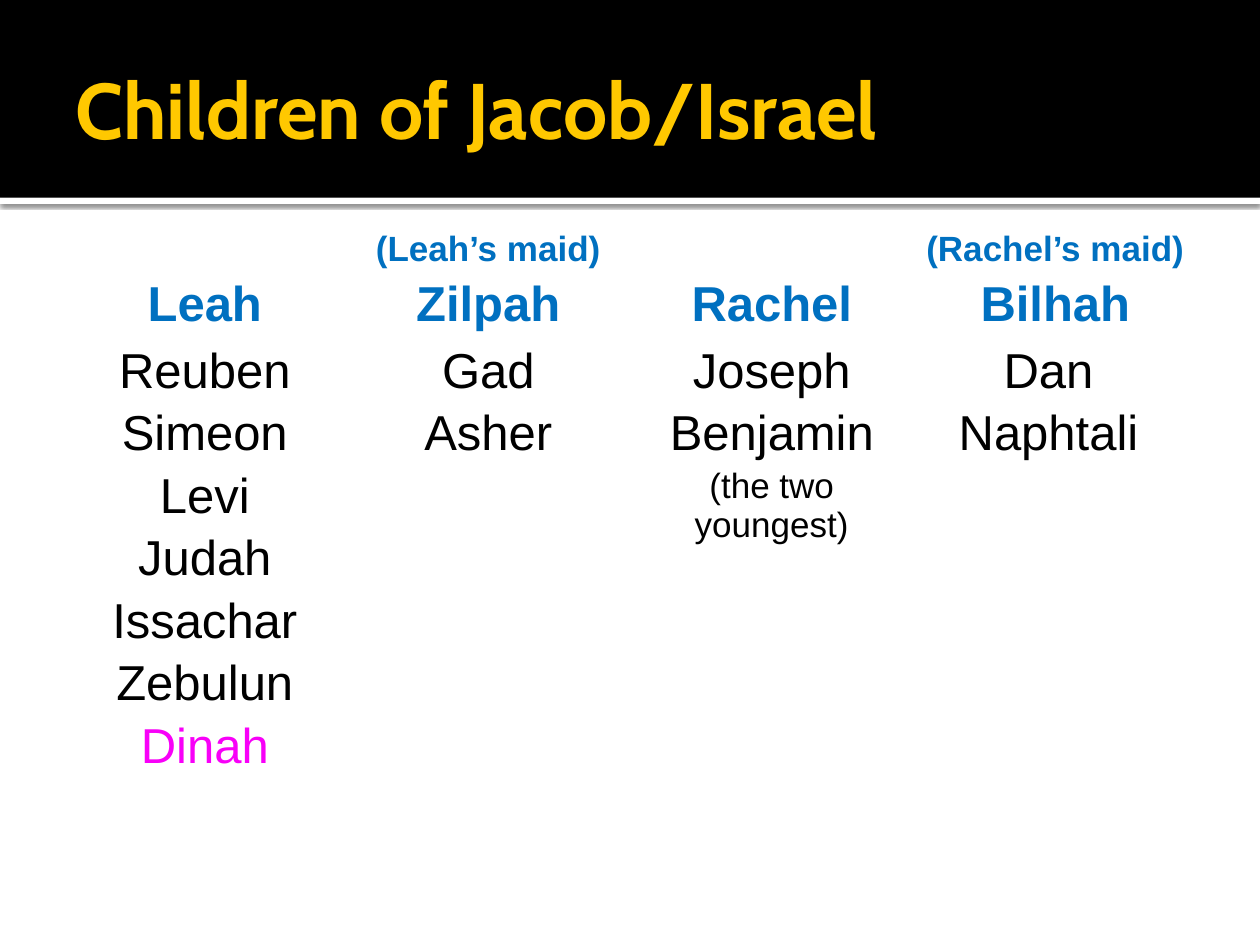
"""Build the slide listing the children of Jacob under each mother."""
from dataclasses import dataclass

from lxml import etree
from pptx import Presentation
from pptx.dml.color import RGBColor
from pptx.enum import shapes, text
from pptx.oxml import ns
from pptx.util import Pt


@dataclass(frozen=True)
class Theme:
    black: str = "000000"
    white: str = "FFFFFF"
    gold: str = "FFC800"
    blue: str = "0070C0"
    magenta: str = "F800F8"
    title_font: str = "Cabin"
    body_font: str = "Arial"
    title_size: float = 45
    name_size: float = 28
    note_size: float = 20


THEME = Theme()


@dataclass(frozen=True)
class Line:
    words: str
    size: float = THEME.name_size
    color: str = THEME.black
    bold: bool = False


@dataclass(frozen=True)
class Family:
    mother: str
    children: tuple[Line, ...]
    role: str = ""

    def heading(self) -> list[Line]:
        lines = [Line(self.mother, THEME.name_size, THEME.blue, True)]
        if self.role:
            lines.insert(0, Line(self.role, THEME.note_size, THEME.blue, True))
        return lines


@dataclass(frozen=True)
class Band:
    top: float
    height: float
    color: str
    shadow: bool = False


PAGE_WIDTH, PAGE_HEIGHT = 720, 540
MARGIN = 36
TABLE_TOP = 126
ROW_HEIGHTS = (67, 287)
SPACE_BEFORE = 0.16

BANDS = (
    Band(113, 3.6, THEME.white, shadow=True),
    Band(0, 113, THEME.black),
)

FAMILIES = (
    Family("Leah", (
        *map(Line, ("Reuben", "Simeon", "Levi", "Judah", "Issachar", "Zebulun")),
        Line("Dinah", color=THEME.magenta),
    )),
    Family("Zilpah", (Line("Gad"), Line("Asher")), "(Leah’s maid)"),
    Family("Rachel", (
        Line("Joseph"),
        Line("Benjamin"),
        Line("(the two youngest)", THEME.note_size),
    )),
    Family("Bilhah", (Line("Dan "), Line("Naphtali ")), "(Rachel’s maid)"),
)


def add_span(para, line: Line, font: str) -> None:
    span = para.add_run()
    span.text = line.words
    span.font.name = font
    span.font.size = Pt(line.size)
    span.font.bold = line.bold
    span.font.color.rgb = RGBColor.from_string(line.color)


def add_shadow(box) -> None:
    effects = box.element.spPr.find(ns.qn("a:effectLst"))
    shadow = etree.SubElement(
        effects, ns.qn("a:outerShdw"), blurRad=str(Pt(2.5)), dist=str(Pt(0.8)),
        dir="5400000", algn="tl", rotWithShape="0")
    color = etree.SubElement(shadow, ns.qn("a:srgbClr"), val=THEME.black)
    etree.SubElement(color, ns.qn("a:alpha"), val="60000")


def draw_band(page, band: Band) -> None:
    box = page.shapes.add_shape(
        shapes.MSO_SHAPE.RECTANGLE, 0, Pt(band.top), Pt(PAGE_WIDTH), Pt(band.height))
    box.fill.solid()
    box.fill.fore_color.rgb = RGBColor.from_string(band.color)
    box.line.fill.background()
    box.shadow.inherit = False
    if band.shadow:
        add_shadow(box)


def draw_title(page, words: str) -> None:
    title = page.shapes.title
    title.left, title.top = Pt(MARGIN), Pt(12.24)
    title.width, title.height = Pt(PAGE_WIDTH - 2 * MARGIN), Pt(98.64)
    frame = title.text_frame
    frame.word_wrap = True
    frame.auto_size = text.MSO_AUTO_SIZE.NONE
    frame.vertical_anchor = text.MSO_ANCHOR.MIDDLE
    frame.margin_left = Pt(7.2)
    frame.margin_right = frame.margin_top = frame.margin_bottom = Pt(3.6)
    para = frame.paragraphs[0]
    para.alignment = text.PP_ALIGN.LEFT
    add_span(para, Line(words, THEME.title_size, THEME.gold, True), THEME.title_font)
    page.shapes.element.append(title.element)


def fill_cell(cell, lines, anchor) -> None:
    cell.fill.background()
    cell.vertical_anchor = anchor
    frame = cell.text_frame
    for index, line in enumerate(lines):
        para = frame.add_paragraph() if index else frame.paragraphs[0]
        para.alignment = text.PP_ALIGN.CENTER
        para.space_before = Pt(SPACE_BEFORE * line.size)
        add_span(para, line, THEME.body_font)


def draw_families(page, families: tuple[Family, ...]) -> None:
    table = page.shapes.add_table(
        len(ROW_HEIGHTS), len(families), Pt(MARGIN), Pt(TABLE_TOP),
        Pt(PAGE_WIDTH - 2 * MARGIN), Pt(sum(ROW_HEIGHTS))).table
    table.first_row = table.horz_banding = False
    for row, height in zip(table.rows, ROW_HEIGHTS):
        row.height = Pt(height)
    for column, family in enumerate(families):
        fill_cell(table.cell(0, column), family.heading(), text.MSO_ANCHOR.BOTTOM)
        fill_cell(table.cell(1, column), family.children, text.MSO_ANCHOR.TOP)


def main() -> None:
    deck = Presentation()
    deck.slide_width, deck.slide_height = Pt(PAGE_WIDTH), Pt(PAGE_HEIGHT)
    page = deck.slides.add_slide(deck.slide_layouts.get_by_name("Title Only"))
    for band in BANDS:
        draw_band(page, band)
    draw_title(page, "Children of Jacob/Israel")
    draw_families(page, FAMILIES)
    deck.save("out.pptx")


if __name__ == "__main__":
    main()
